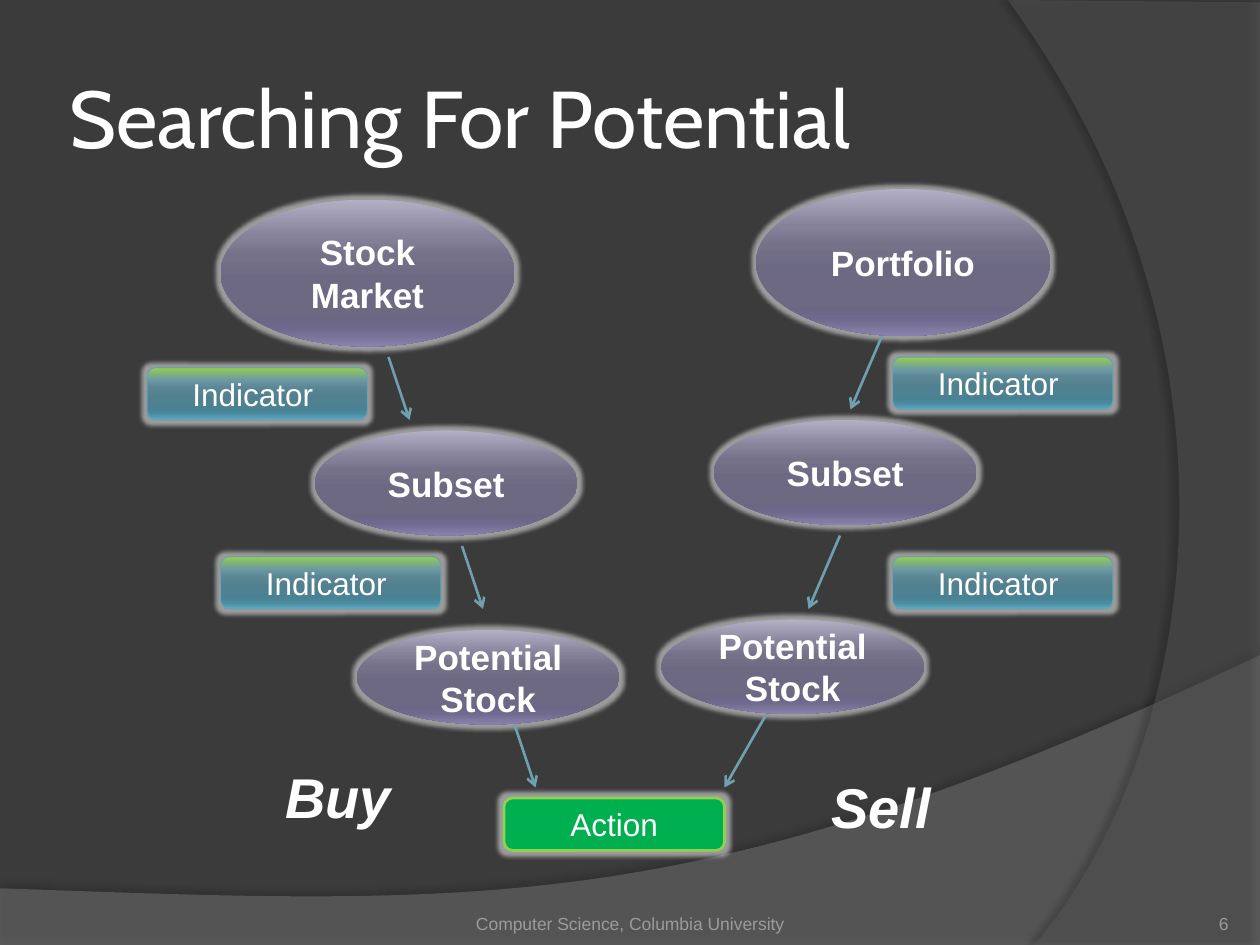
from dataclasses import dataclass

from lxml.etree import SubElement
from pptx import Presentation
from pptx.dml.color import RGBColor
from pptx.enum.shapes import MSO_CONNECTOR, MSO_SHAPE
from pptx.enum.text import MSO_ANCHOR, PP_ALIGN
from pptx.oxml.ns import qn
from pptx.util import Pt

COLORS = {
    "background": "3B3B3B", "wave": "7F7F7F", "arc": "5E5E5E", "text": "FFFFFF",
    "footer": "9D9B9A", "arrow": "6EA0B0", "action": "00B050", "lime": "92D050",
    "glow": "FFFFFF", "shadow": "000000",
}
STOPS = (0, 25, 38, 55, 80, 88, 100)
VIOLET = ("B3B0C6", "86829A", "747188", "6D6983", "6A6684", "6F698D", "8982AC")
TEAL = ("92D050", "6C97A5", "5B8694", "51808F", "4A8294", "4A8BA0", "5DAAC2")


@dataclass
class Node:
    label: str
    left: float
    top: float
    width: float
    height: float


@dataclass
class Flow:
    stages: list[Node]
    indicators: list[tuple[float, float]]
    arrows: list[tuple[float, float, float, float]]


@dataclass
class Label:
    text: str
    left: float
    top: float
    width: float
    height: float
    size: float
    color: str = "text"
    font: str = "Arial"
    bold: bool = False
    align: PP_ALIGN = PP_ALIGN.LEFT
    anchor: MSO_ANCHOR = MSO_ANCHOR.TOP
    insets: tuple[float, float, float, float] = (7.2, 3.6, 7.2, 3.6)
    wrap: bool = True


FLOWS = [
    Flow(
        [Node("Stock Market", 126, 114, 168, 84), Node("Subset", 180, 246, 150, 60),
         Node("Potential Stock", 204, 360, 150, 54)],
        [(84, 210), (126, 318)],
        [(222, 204, 234, 240), (264, 312, 276, 348), (294, 414, 306, 450)],
    ),
    Flow(
        [Node("Portfolio", 432, 108, 168, 84), Node("Subset", 408, 240, 150, 60),
         Node("Potential Stock", 378, 354, 150, 54)],
        [(510, 204), (510, 318)],
        [(504, 192, 486, 234), (480, 306, 462, 348), (438, 408, 414, 450)],
    ),
]
LABELS = [
    Label("Searching For Potential", 36, 21.6, 588, 90, 46, font="Cabin",
          anchor=MSO_ANCHOR.MIDDLE, insets=(3.6, 3.6, 3.6, 3.6)),
    Label("Computer Science, Columbia University", 246, 505.5, 228, 28.5, 10, "footer",
          align=PP_ALIGN.CENTER, anchor=MSO_ANCHOR.BOTTOM, insets=(0, 3.6, 0, 0)),
    Label("6", 642, 505.5, 60, 28.5, 10, "footer",
          align=PP_ALIGN.RIGHT, anchor=MSO_ANCHOR.BOTTOM, insets=(0, 0, 0, 0)),
    Label("Buy", 156, 432, 75.6, 46, 32, bold=True, wrap=False),
    Label("Sell", 468, 438, 72, 46, 32, bold=True, wrap=False),
]


def rgb(name: str) -> RGBColor:
    """Return the named colour."""
    return RGBColor.from_string(COLORS[name])


def add_effect(shape, kind: str, color: str, opacity: int, **attributes: str) -> None:
    """Give a shape one glow or shadow effect."""
    shape.shadow.inherit = False
    effects = shape._element.spPr.find(qn("a:effectLst"))
    effect = SubElement(effects, qn(f"a:{kind}"), attributes)
    tint = SubElement(effect, qn("a:srgbClr"), val=COLORS[color])
    SubElement(tint, qn("a:alpha"), val=str(opacity * 1000))


def bezier(points: list[tuple[float, float]], steps: int = 60) -> list[tuple[float, float]]:
    """Sample a cubic curve given by four points."""
    curve = []
    for step in range(steps + 1):
        t = step / steps
        weights = ((1 - t) ** 3, 3 * t * (1 - t) ** 2, 3 * t * t * (1 - t), t ** 3)
        curve.append(tuple(sum(w * p[axis] for w, p in zip(weights, points)) for axis in (0, 1)))
    return curve


def add_backdrop(page, points, color: str, fill: int, shade: int, distance: float, angle: int) -> None:
    """Draw a translucent background sweep."""
    corners = [(Pt(x), Pt(y)) for x, y in points]
    builder = page.shapes.build_freeform(*corners[0])
    builder.add_line_segments(corners[1:], close=True)
    shape = builder.convert_to_shape()
    shape.fill.solid()
    shape.fill.fore_color.rgb = rgb(color)
    tint = shape._element.spPr.find(qn("a:solidFill"))[0]
    SubElement(tint, qn("a:alpha"), val=str(fill * 1000))
    shape.line.fill.background()
    add_effect(shape, "outerShdw", "shadow", shade, blurRad=str(Pt(4)),
               dist=str(Pt(distance)), dir=str(angle * 60000))


def add_node(shapes, kind: MSO_SHAPE, node: Node, size: float, bold: bool = False):
    """Add a glowing shape with centred text."""
    shape = shapes.add_shape(kind, Pt(node.left), Pt(node.top), Pt(node.width), Pt(node.height))
    add_effect(shape, "glow", "glow", 50, rad=str(Pt(5)))
    shape.line.fill.background()
    shape.text_frame.word_wrap = True
    shape.text_frame.vertical_anchor = MSO_ANCHOR.MIDDLE
    write(shape.text_frame, node.label, size, "text", "Arial", bold, PP_ALIGN.CENTER)
    return shape


def write(frame, text: str, size: float, color: str, font: str, bold: bool, align: PP_ALIGN):
    """Fill a text frame with one styled paragraph."""
    para = frame.paragraphs[0]
    para.text = text
    para.alignment = align
    para.font.size = Pt(size)
    para.font.name = font
    para.font.bold = bold
    para.font.color.rgb = rgb(color)
    return para


def set_gradient(shape, colors: tuple[str, ...]) -> None:
    """Fill a shape with a top to bottom gradient."""
    shape.fill.gradient()
    shape.fill.gradient_angle = 270
    stops = shape._element.spPr.find(qn("a:gradFill")).find(qn("a:gsLst"))
    for stop in list(stops):
        stops.remove(stop)
    for position, color in zip(STOPS, colors):
        stop = SubElement(stops, qn("a:gs"), pos=str(position * 1000))
        SubElement(stop, qn("a:srgbClr"), val=color)


def set_line(shape, color: str, width: float) -> None:
    """Style an outline or a connector."""
    shape.line.color.rgb = rgb(color)
    shape.line.width = Pt(width)


def add_arrow(shapes, ends: tuple[float, float, float, float]) -> None:
    """Add a straight arrow."""
    arrow = shapes.add_connector(MSO_CONNECTOR.STRAIGHT, *map(Pt, ends))
    set_line(arrow, "arrow", 1.5)
    SubElement(arrow.line._get_or_add_ln(), qn("a:tailEnd"), type="arrow")
    SubElement(arrow._element.spPr, qn("a:effectLst"))


def add_flow(page, flow: Flow) -> None:
    """Add one grouped chain of stages, arrows and indicators."""
    shapes = page.shapes.add_group_shape().shapes
    for stage in flow.stages:
        set_gradient(add_node(shapes, MSO_SHAPE.OVAL, stage, 20, True), VIOLET)
    for ends in flow.arrows:
        add_arrow(shapes, ends)
    for left, top in flow.indicators:
        node = Node("Indicator ", left, top, 126, 30)
        indicator = add_node(shapes, MSO_SHAPE.ROUNDED_RECTANGLE, node, 18)
        set_gradient(indicator, TEAL)
        set_line(indicator, "arrow", 0.75)


def add_label(page, label: Label) -> None:
    """Add a text box."""
    box = page.shapes.add_textbox(Pt(label.left), Pt(label.top), Pt(label.width), Pt(label.height))
    frame = box.text_frame
    frame.word_wrap = label.wrap
    frame.vertical_anchor = label.anchor
    frame.margin_left, frame.margin_top, frame.margin_right, frame.margin_bottom = map(Pt, label.insets)
    para = write(frame, label.text, label.size, label.color, label.font, label.bold, label.align)
    para.font.italic = label.bold


def main() -> None:
    """Build and save the slide."""
    deck = Presentation()
    deck.slide_width, deck.slide_height = Pt(720), Pt(540)
    page = deck.slides.add_slide(deck.slide_layouts[6])
    page.background.fill.solid()
    page.background.fill.fore_color.rgb = rgb("background")
    wave = bezier([(720, 374.4), (402.5, 524.9), (281.5, 517.7), (0, 507.6)])
    add_backdrop(page, [(0, 540), (720, 540), *wave], "wave", 45, 35, 3.5, 270)
    arc = bezier([(591, 540), (673.2, 445.7), (733, 216), (576, 0)])
    add_backdrop(page, [(720, 1.4), (720, 540), *arc], "arc", 40, 45, 4, 180)
    for label in LABELS:
        add_label(page, label)
    for flow in FLOWS:
        add_flow(page, flow)
    action = add_node(page.shapes, MSO_SHAPE.ROUNDED_RECTANGLE, Node("Action", 288, 456, 126, 30), 18)
    action.fill.solid()
    action.fill.fore_color.rgb = rgb("action")
    set_line(action, "lime", 1.5)
    deck.save("out.pptx")


if __name__ == "__main__":
    main()
